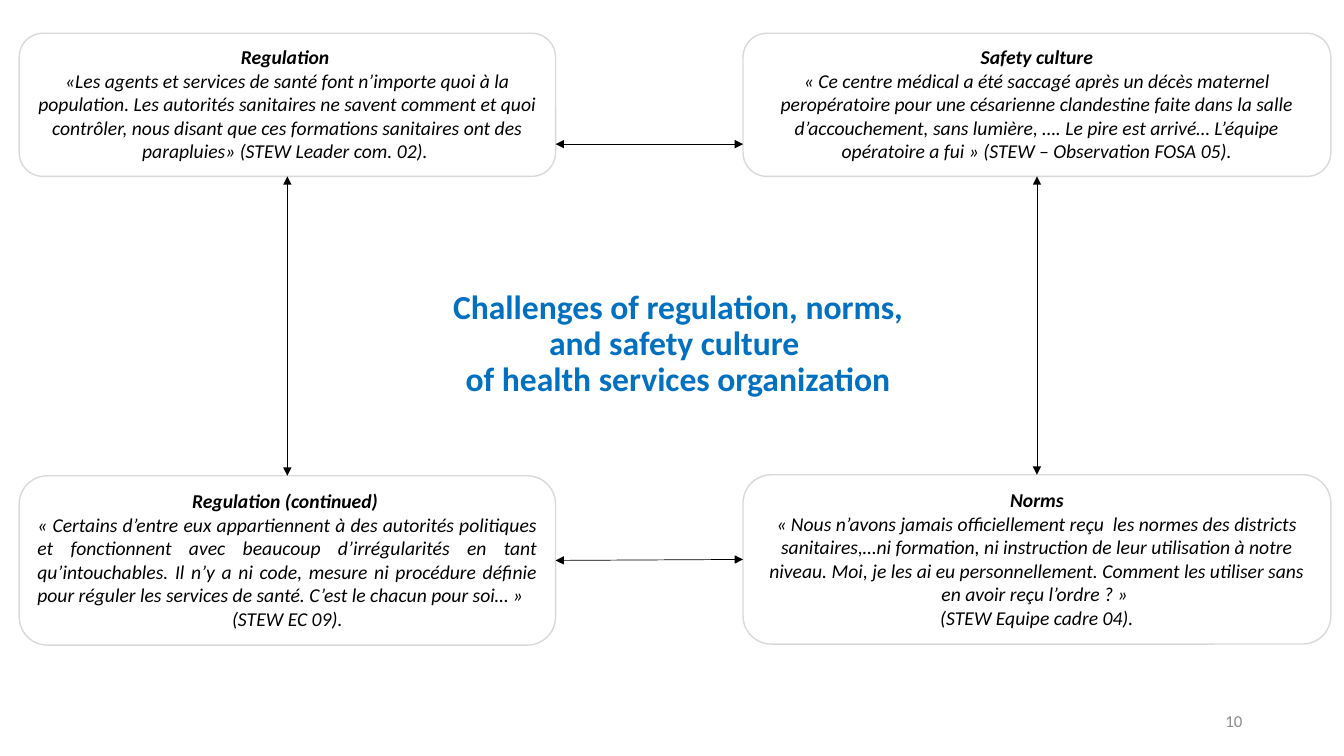
from dataclasses import dataclass

from lxml.etree import SubElement
from pptx import Presentation
from pptx.dml.color import RGBColor
from pptx.enum.shapes import MSO_CONNECTOR as LINE, MSO_SHAPE as SHAPE
from pptx.enum.text import MSO_ANCHOR as ANCHOR, MSO_AUTO_SIZE as FIT, PP_ALIGN as ALIGN
from pptx.oxml.ns import qn
from pptx.util import Inches, Pt


@dataclass(frozen=True)
class Theme:
    """Colours, font and type sizes of the slide."""
    font: str = "Calibri"
    title: RGBColor = RGBColor(0x00, 0x70, 0xC0)
    ink: RGBColor = RGBColor(0x00, 0x00, 0x00)
    paper: RGBColor = RGBColor(0xFF, 0xFF, 0xFF)
    border: RGBColor = RGBColor(0xD9, 0xD9, 0xD9)
    muted: RGBColor = RGBColor(0x8C, 0x8C, 0x8C)
    title_size: int = 24
    quote_size: int = 14
    number_size: int = 12


THEME = Theme()
LEFT, RIGHT = (0.19, 5.32), (7.37, 5.83)
TOP_Y, TOP_H, BOTTOM_H = 0.33, 1.42, 1.68
TOP_LINK_Y = 1.43
SITE_TOP, SITE_LEFT, SITE_BOTTOM, SITE_RIGHT = range(4)

REGULATION = [
    ("Regulation ", ALIGN.CENTER),
    ("«Les agents et services de santé font n’importe quoi à la population. "
     "Les autorités sanitaires ne savent comment et quoi contrôler, nous disant "
     "que ces formations sanitaires ont des parapluies» (STEW Leader com. 02). ",
     ALIGN.CENTER),
]
SAFETY = [
    ("Safety culture", ALIGN.CENTER),
    ("« Ce centre médical a été saccagé après un décès maternel peropératoire "
     "pour une césarienne clandestine faite dans la salle d’accouchement, sans "
     "lumière, …. Le pire est arrivé… L’équipe opératoire a fui » "
     "(STEW – Observation FOSA 05).", ALIGN.CENTER),
]
NORMS = [
    ("Norms", ALIGN.CENTER),
    ("« Nous n’avons jamais officiellement reçu  les normes des districts "
     "sanitaires,…ni formation, ni instruction de leur utilisation à notre "
     "niveau. Moi, je les ai eu personnellement. Comment les utiliser sans en "
     "avoir reçu l’ordre ? » ", ALIGN.CENTER),
    ("(STEW Equipe cadre 04).", ALIGN.CENTER),
]
CONTINUED = [
    ("Regulation (continued) ", ALIGN.CENTER),
    ("« Certains d’entre eux appartiennent à des autorités politiques et "
     "fonctionnent avec beaucoup d’irrégularités en tant qu’intouchables. Il n’y "
     "a ni code, mesure ni procédure définie pour réguler les services de santé. "
     "C’est le chacun pour soi… »", ALIGN.JUSTIFY),
    ("(STEW EC 09).", ALIGN.CENTER),
]


def write(frame, lines, size, color, bold=False, italic=False, bold_first=False, spacing=None):
    """Fill a text frame with one styled run per aligned paragraph."""
    frame.word_wrap = True
    for index, (words, align) in enumerate(lines):
        paragraph = frame.paragraphs[0] if index == 0 else frame.add_paragraph()
        paragraph.alignment = align
        if spacing:
            paragraph.line_spacing = spacing
        run = paragraph.add_run()
        run.text = words
        font = run.font
        font.name, font.size, font.color.rgb = THEME.font, Pt(size), color
        font.bold = bold or (bold_first and index == 0)
        font.italic = italic


def add_heading(slide, x, y, w, h):
    """Place the central title."""
    heading = slide.shapes.title
    heading.left, heading.top, heading.width, heading.height = map(Inches, (x, y, w, h))
    frame = heading.text_frame
    frame.auto_size, frame.vertical_anchor = FIT.NONE, ANCHOR.MIDDLE
    lines = ["Challenges of regulation, norms, and safety culture ",
             "of health services organization"]
    write(frame, [(line, ALIGN.CENTER) for line in lines], THEME.title_size,
          THEME.title, bold=True, spacing=0.9)


def add_page_number(slide, x, y, w, h):
    """Place the page number at the right of its box."""
    frame = slide.shapes.add_textbox(*map(Inches, (x, y, w, h))).text_frame
    frame.vertical_anchor = ANCHOR.MIDDLE
    write(frame, [("10", ALIGN.RIGHT)], THEME.number_size, THEME.muted)


def add_quote(slide, x, y, w, h, lines):
    """Draw a rounded card with a bold heading over a quotation."""
    card = slide.shapes.add_shape(SHAPE.ROUNDED_RECTANGLE, *map(Inches, (x, y, w, h)))
    card.shadow.inherit = False
    card.fill.solid()
    card.fill.fore_color.rgb = THEME.paper
    card.line.color.rgb, card.line.width = THEME.border, Pt(1)
    frame = card.text_frame
    frame.auto_size, frame.vertical_anchor = FIT.SHAPE_TO_FIT_TEXT, ANCHOR.TOP
    write(frame, lines, THEME.quote_size, THEME.ink, italic=True, bold_first=True)
    return card


def add_link(slide, x1=0, y1=0, x2=0, y2=0, width=0.5):
    """Draw a straight line with an arrowhead at both ends."""
    link = slide.shapes.add_connector(LINE.STRAIGHT, *map(Inches, (x1, y1, x2, y2)))
    link.line.color.rgb, link.line.width = THEME.ink, Pt(width)
    outline = link.line._get_or_add_ln()
    for end in ("a:headEnd", "a:tailEnd"):
        SubElement(outline, qn(end), type="triangle")
    SubElement(link._element.spPr, qn("a:effectLst"))
    return link


def join(slide, start, start_site, end, end_site, width=0.5):
    """Attach a link to the sites of two cards."""
    link = add_link(slide, width=width)
    link.begin_connect(start, start_site)
    link.end_connect(end, end_site)


def add_quote_ring(slide):
    """Place the four quotations and the links between them."""
    (left_x, left_w), (right_x, right_w) = LEFT, RIGHT
    regulation = add_quote(slide, left_x, TOP_Y, left_w, TOP_H, REGULATION)
    safety = add_quote(slide, right_x, TOP_Y, right_w, TOP_H, SAFETY)
    norms = add_quote(slide, right_x, 4.71, right_w, BOTTOM_H, NORMS)
    continued = add_quote(slide, left_x, 4.72, left_w, BOTTOM_H, CONTINUED)
    join(slide, regulation, SITE_BOTTOM, continued, SITE_TOP, width=0.25)
    join(slide, norms, SITE_LEFT, continued, SITE_RIGHT)
    join(slide, safety, SITE_BOTTOM, norms, SITE_TOP)
    add_link(slide, right_x, TOP_LINK_Y, left_x + left_w, TOP_LINK_Y)


def main():
    """Build and save the slide."""
    deck = Presentation()
    deck.slide_width, deck.slide_height = Inches(13.33), Inches(7.5)
    slide = deck.slides.add_slide(deck.slide_layouts.get_by_name("Title Only"))
    add_page_number(slide, 9.42, 6.95, 3, 0.4)
    add_heading(slide, 4.14, 2.95, 5.17, 0.94)
    add_quote_ring(slide)
    deck.save("out.pptx")


if __name__ == "__main__":
    main()
